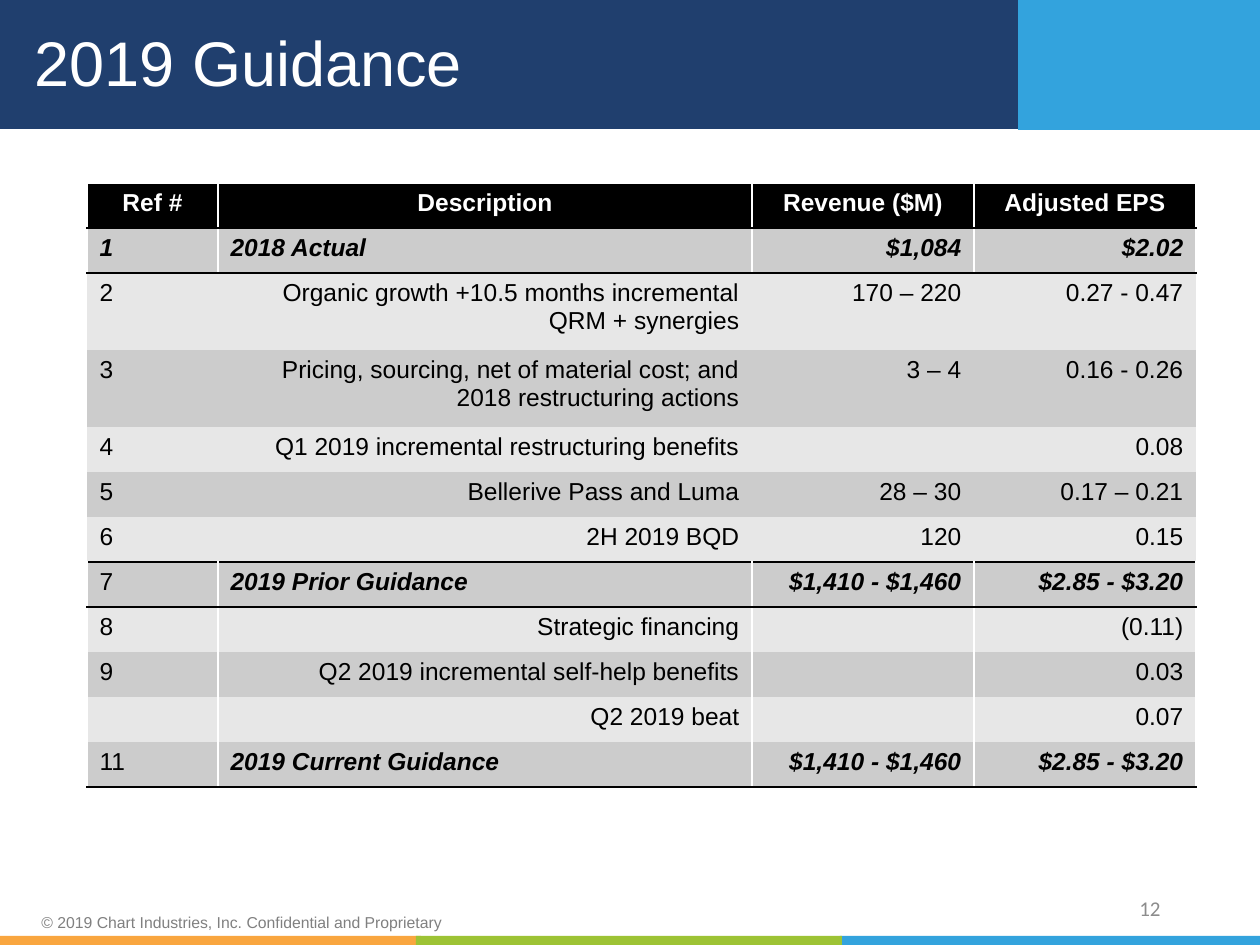
from lxml.etree import SubElement
from pptx import Presentation
from pptx.dml.color import RGBColor
from pptx.enum.shapes import MSO_SHAPE
from pptx.enum.text import MSO_ANCHOR, PP_ALIGN
from pptx.oxml.ns import qn
from pptx.util import Emu, Pt

EMU_PER_PX = 914400 / 126


def px(length):
    return Emu(round(length * EMU_PER_PX))


def color(hex_value):
    return RGBColor.from_string(hex_value)


presentation = Presentation()
presentation.slide_width, presentation.slide_height = px(1260), px(945)
slide = presentation.slides.add_slide(presentation.slide_layouts[5])
shapes = slide.shapes

# Header and footer bands
BANDS = [
    (-1, 0, 1262, 129, "203F6E"),
    (1018, -1, 243, 131, "33A3DD"),
    (840, 936, 421, 10, "33A3DD"),
    (-5, 936, 426, 10, "F9A63F"),
    (416, 936, 426, 10, "9DC335"),
]
for left, top, width, height, fill in BANDS:
    band = shapes.add_shape(MSO_SHAPE.RECTANGLE, px(left), px(top), px(width), px(height))
    band.shadow.inherit = False
    band.fill.solid()
    band.fill.fore_color.rgb = color(fill)
    band.line.fill.background()

# Title, brought in front of the header band
title = shapes.title
title.left, title.top, title.width, title.height = px(22), px(11), px(987), px(110)
shapes._spTree.append(title._element)
title.text_frame.text = "2019 Guidance"
title.text_frame.vertical_anchor = MSO_ANCHOR.MIDDLE
paragraph = title.text_frame.paragraphs[0]
paragraph.alignment = PP_ALIGN.LEFT
paragraph.line_spacing = 0.9
paragraph.font.name, paragraph.font.size = "Arial", Pt(36)
paragraph.font.color.rgb = color("FFFFFF")

# Copyright line and page number
FOOTERS = [
    ("© 2019 Chart Industries, Inc. Confidential and Proprietary",
     29, 911, 437, 23, 3, PP_ALIGN.LEFT, "Arial", 9, "808080"),
    ("12", 890, 883, 283, 50, 6, PP_ALIGN.RIGHT, "Calibri", 12, "8C8C8C"),
]
for text, left, top, width, height, inset, alignment, font_name, size, text_color in FOOTERS:
    frame = shapes.add_textbox(px(left), px(top), px(width), px(height)).text_frame
    frame.word_wrap = True
    frame.vertical_anchor = MSO_ANCHOR.MIDDLE
    frame.margin_top = frame.margin_bottom = px(inset)
    frame.text = text
    paragraph = frame.paragraphs[0]
    paragraph.alignment = alignment
    paragraph.font.name, paragraph.font.size = font_name, Pt(size)
    paragraph.font.color.rgb = color(text_color)

# Guidance table
ROWS = [
    ("Ref #", "Description", "Revenue ($M)", "Adjusted EPS"),
    ("1", "2018 Actual", "$1,084", "$2.02"),
    ("2", "Organic growth +10.5 months incremental QRM + synergies", "170 – 220", "0.27 - 0.47"),
    ("3", "Pricing, sourcing, net of material cost; and 2018 restructuring actions",
     "3 – 4", "0.16 - 0.26"),
    ("4", "Q1 2019 incremental restructuring benefits", "", "0.08"),
    ("5", "Bellerive Pass and Luma", "28 – 30", "0.17 – 0.21"),
    ("6", "2H 2019 BQD", "120", "0.15"),
    ("7", "2019 Prior Guidance", "$1,410 - $1,460", "$2.85 - $3.20"),
    ("8", "Strategic financing", "", "(0.11)"),
    ("9", "Q2 2019 incremental self-help benefits", "", "0.03"),
    ("", "Q2 2019 beat", "", "0.07"),
    ("11", "2019 Current Guidance", "$1,410 - $1,460", "$2.85 - $3.20"),
]
COLUMN_WIDTHS = [131, 534, 222, 222]
ROW_HEIGHTS = [77 if row in (2, 3) else 45 for row in range(len(ROWS))]
TOTAL_ROWS = {1, 7, 11}
UNRULED_ROWS = range(2, 7)  # rows without vertical lines
HORIZONTAL_LINES = {0: "FFFFFF", 1: "000000", 2: "000000", 7: "000000",
                    8: "000000", 12: "000000"}

table = shapes.add_table(len(ROWS), len(COLUMN_WIDTHS), px(87), px(183),
                         px(sum(COLUMN_WIDTHS)), px(sum(ROW_HEIGHTS))).table
for column, width in zip(table.columns, COLUMN_WIDTHS):
    column.width = px(width)
for table_row, height in zip(table.rows, ROW_HEIGHTS):
    table_row.height = px(height)

for row, texts in enumerate(ROWS):
    is_header = row == 0
    side_line = None if row in UNRULED_ROWS else "FFFFFF"
    borders = {"a:lnL": side_line, "a:lnR": side_line,
               "a:lnT": HORIZONTAL_LINES.get(row), "a:lnB": HORIZONTAL_LINES.get(row + 1)}
    for column, text in enumerate(texts):
        cell = table.cell(row, column)
        cell.text = text
        paragraph = cell.text_frame.paragraphs[0]
        is_total = row in TOTAL_ROWS and (column > 0 or row == 1)
        if is_header:
            paragraph.alignment = PP_ALIGN.CENTER
        elif column == 0 or (column == 1 and is_total):
            paragraph.alignment = PP_ALIGN.LEFT
        else:
            paragraph.alignment = PP_ALIGN.RIGHT
        font = paragraph.font
        font.name, font.size = "Arial", Pt(14)
        font.bold, font.italic = is_header or is_total, is_total
        font.color.rgb = color("FFFFFF" if is_header else "000000")

        properties = cell._tc.get_or_add_tcPr()
        for tag, line_color in borders.items():
            line = SubElement(properties, qn(tag), w=str(Pt(1)))
            if line_color:
                fill = SubElement(line, qn("a:solidFill"))
                SubElement(fill, qn("a:srgbClr"), val=line_color)
            else:
                SubElement(line, qn("a:noFill"))
        cell.fill.solid()
        cell.fill.fore_color.rgb = color(
            "000000" if is_header else "CCCCCC" if row % 2 else "E7E7E7")

presentation.save("out.pptx")
